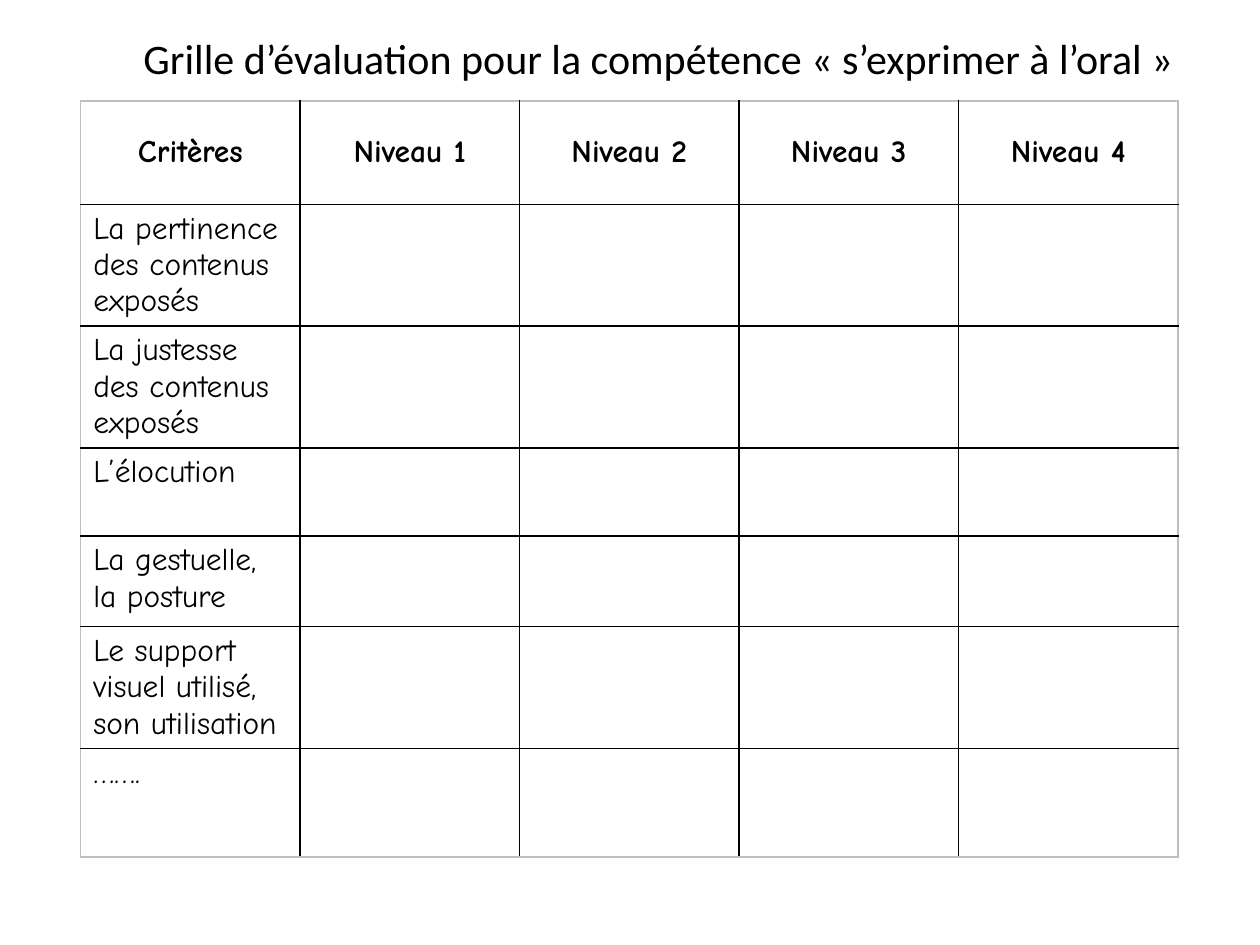
from dataclasses import dataclass

import pptx
import pptx.dml.color
import pptx.enum.text
import pptx.oxml
import pptx.oxml.ns
import pptx.util

WIDTH, HEIGHT = 10, 7.5
COLORS = {"text": "000000", "grid": "000000", "frame": "BFBFBF", "cell": "FFFFFF"}
HEADERS = ["Critères"] + [f"Niveau {n}" for n in range(1, 5)]
PP = pptx.enum.text.PP_ALIGN
ANCHOR = pptx.enum.text.MSO_ANCHOR


@dataclass(frozen=True)
class Box:
    left: float
    top: float
    width: float
    height: float

    def emu(self) -> list[int]:
        shares = (self.left, self.top, self.width, self.height)
        return [pptx.util.Inches(v * side) for v, side in zip(shares, (WIDTH, HEIGHT) * 2)]


@dataclass(frozen=True)
class Row:
    texts: list[str]
    height: float
    header: bool = False


TITLE = Box(0.104, 0.028, 0.849, 0.067)
GRID = Box(0.064, 0.107, 0.871, 0.8)
ROWS = [
    Row(HEADERS, 0.82, True),
    Row(["La pertinence des contenus exposés"], 0.82),
    Row(["La justesse des contenus exposés"], 0.82),
    Row(["L’élocution"], 0.7),
    Row(["La gestuelle, la posture"], 0.72),
    Row(["Le support visuel utilisé, son utilisation"], 0.9),
    Row(["……."], 0.86),
]


def write(tf, text: str, fmt: dict, align=PP.LEFT) -> None:
    p = tf.paragraphs[0]
    p.alignment = align
    r = p.add_run()
    r.text = text
    for name, value in fmt.items():
        setattr(r.font, name, value)
    r.font.color.rgb = pptx.dml.color.RGBColor.from_string(COLORS["text"])


def border(cell, outer: dict[str, bool]) -> None:
    tc_pr = cell._tc.get_or_add_tcPr()
    ns = pptx.oxml.ns.nsdecls("a")
    for side, is_outer in outer.items():
        color = COLORS["frame" if is_outer else "grid"]
        tc_pr.append(pptx.oxml.parse_xml(
            f'<a:ln{side} {ns} w="12700"><a:solidFill><a:srgbClr val="{color}"/>'
            f'</a:solidFill></a:ln{side}>'))


def add_title(s, text: str) -> None:
    tf = s.shapes.add_textbox(*TITLE.emu()).text_frame
    tf.word_wrap = True
    tf.auto_size = pptx.enum.text.MSO_AUTO_SIZE.SHAPE_TO_FIT_TEXT
    write(tf, text, {"name": "Calibri", "size": pptx.util.Pt(24)})


def add_grid(s, rows: list[Row]) -> None:
    n_rows, n_cols = len(rows), len(HEADERS)
    table = s.shapes.add_table(n_rows, n_cols, *GRID.emu()).table
    table.horz_banding = False
    for i, row in enumerate(rows):
        table.rows[i].height = pptx.util.Inches(row.height)
        fmt = {"name": "Comic Neue", "size": pptx.util.Pt(18), "bold": row.header}
        for j in range(n_cols):
            cell = table.cell(i, j)
            border(cell, {"L": j == 0, "R": j == n_cols - 1,
                          "T": i == 0, "B": i == n_rows - 1})
            cell.fill.solid()
            cell.fill.fore_color.rgb = pptx.dml.color.RGBColor.from_string(COLORS["cell"])
            cell.vertical_anchor = ANCHOR.MIDDLE if row.header else ANCHOR.TOP
            if j < len(row.texts):
                write(cell.text_frame, row.texts[j], fmt,
                      PP.CENTER if row.header else PP.LEFT)


def main() -> None:
    prs = pptx.Presentation()
    prs.slide_width = pptx.util.Inches(WIDTH)
    prs.slide_height = pptx.util.Inches(HEIGHT)
    s = prs.slides.add_slide(prs.slide_layouts[6])
    add_grid(s, ROWS)
    add_title(s, "Grille d’évaluation pour la compétence « s’exprimer à l’oral »")
    prs.save("out.pptx")


if __name__ == "__main__":
    main()
